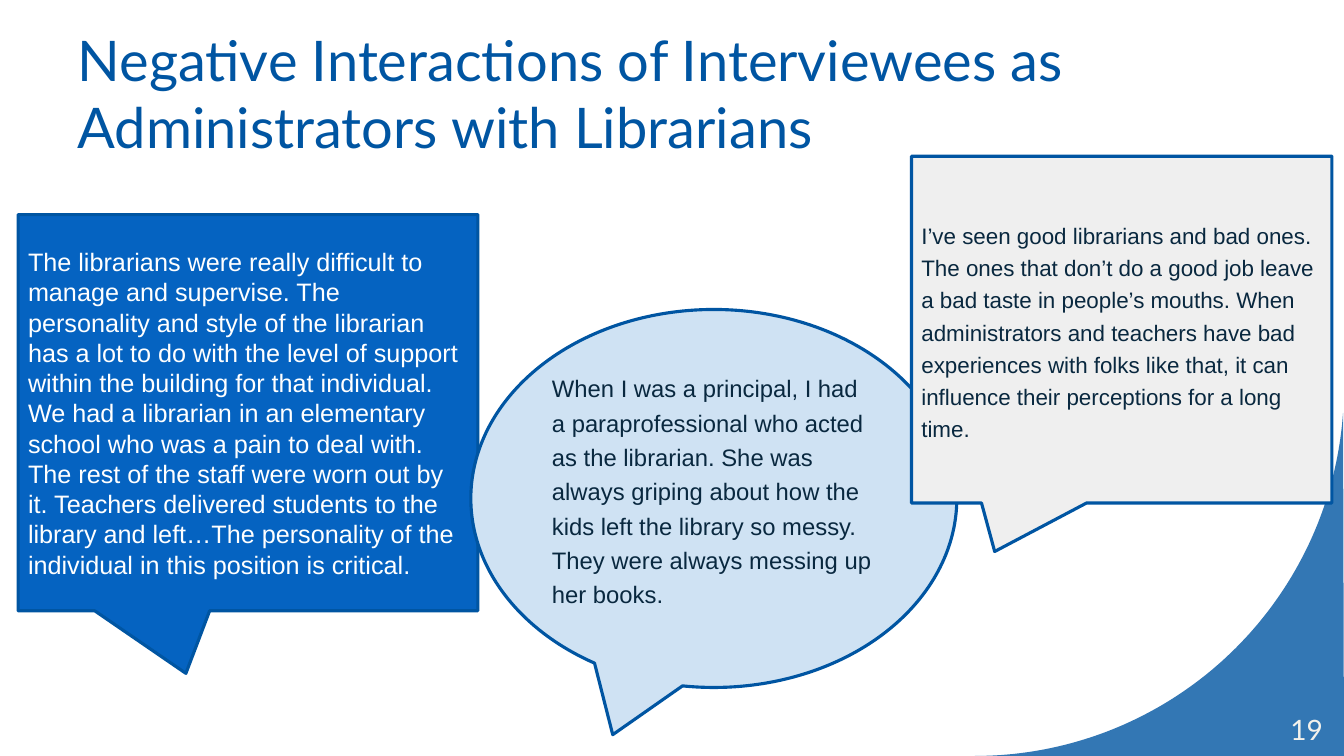
import math
from lxml import etree
from pptx import Presentation
from pptx.dml.color import RGBColor
from pptx.enum import shapes, text
from pptx.oxml import ns
from pptx.util import Inches, Pt

BLUE = RGBColor(0x00, 0x55, 0xA2)
BRIGHT_BLUE = RGBColor(0x05, 0x63, 0xC1)
PALE_BLUE = RGBColor(0xCF, 0xE2, 0xF3)
LIGHT_GRAY = RGBColor(0xEF, 0xEF, 0xEF)
NAVY = RGBColor(0x09, 0x28, 0x3F)
WHITE = RGBColor(0xFF, 0xFF, 0xFF)
CREAM = RGBColor(0xF4, 0xF2, 0xEC)


def write_text(shape, content, size, color, font="Lato", align=text.PP_ALIGN.LEFT,
               spacing=1.0, before=0, margin=0.05, bottom=0.05):
    frame = shape.text_frame
    frame.word_wrap = True
    frame.auto_size = text.MSO_AUTO_SIZE.NONE
    frame.vertical_anchor = text.MSO_ANCHOR.MIDDLE
    frame.margin_left = frame.margin_right = Inches(0.1)
    frame.margin_top, frame.margin_bottom = Inches(margin), Inches(bottom)
    paragraph = frame.paragraphs[0]
    paragraph.alignment = align
    paragraph.line_spacing = spacing
    paragraph.space_before = Pt(before)
    run = paragraph.add_run()
    run.text = content
    run.font.name = font
    run.font.size = Pt(size)
    run.font.color.rgb = color


presentation = Presentation()
presentation.slide_width = Inches(13.33)
presentation.slide_height = Inches(7.5)
slide = presentation.slides.add_slide(presentation.slide_layouts[5])

center_x, center_y, radius = 9.67, 3.84, 3.66
arc = [(Inches(center_x + radius * math.cos(math.radians(angle))),
        Inches(center_y + radius * math.sin(math.radians(angle))))
       for angle in range(90, 3, -1)]
builder = slide.shapes.build_freeform(*arc[0])
builder.add_line_segments(arc[1:] + [(Inches(13.33), Inches(7.5))], close=True)
corner = builder.convert_to_shape()
corner.shadow.inherit = False
corner.line.fill.background()
corner.fill.solid()
corner.fill.fore_color.rgb = BLUE
corner_color = corner._element.spPr.find(".//" + ns.qn("a:srgbClr"))
etree.SubElement(corner_color, ns.qn("a:alpha"), val="80000")

title = slide.shapes.title
title.left, title.top = Inches(0.67), Inches(0.19)
title.width, title.height = Inches(10.84), Inches(1.45)
write_text(title, "Negative Interactions of Interviewees as Administrators with Librarians",
           size=40, color=BLUE)

page_number = slide.shapes.add_textbox(Inches(12.46), Inches(7.04), Inches(0.76), Inches(0.4))
write_text(page_number, "19", size=20, color=CREAM, align=text.PP_ALIGN.RIGHT)

SHAPE = shapes.MSO_SHAPE
callouts = [
    (SHAPE.ROUNDED_RECTANGULAR_CALLOUT, (0.18, 2.13, 4.56, 3.93), (-0.135, 0.658, 0),
     BRIGHT_BLUE, WHITE, 18, 1.0, 0.1,
     "The librarians were really difficult to manage and supervise. The personality and style "
     "of the librarian has a lot to do with the level of support within the building for that "
     "individual. We had a librarian in an elementary school who was a pain to deal with. The "
     "rest of the staff were worn out by it. Teachers delivered students to the library and "
     "left…The personality of the individual in this position is critical."),
    (SHAPE.OVAL_CALLOUT, (4.67, 3.07, 4.82, 3.75), (-0.208, 0.625),
     PALE_BLUE, NAVY, 17, 1.2, 0.3,
     "When I was a principal, I had a paraprofessional who acted as the librarian. She was "
     "always griping about how the kids left the library so messy. They were always messing "
     "up her books."),
    (SHAPE.RECTANGULAR_CALLOUT, (9.04, 1.55, 4.17, 3.44), (-0.302, 0.64),
     LIGHT_GRAY, NAVY, 16, 1.2, 0.1,
     "I’ve seen good librarians and bad ones. The ones that don’t do a good job leave a bad "
     "taste in people’s mouths. When administrators and teachers have bad experiences with "
     "folks like that, it can influence their perceptions for a long time."),
]
for kind, box, adjustments, fill, color, size, spacing, bottom, quote in callouts:
    callout = slide.shapes.add_shape(kind, *map(Inches, box))
    for index, value in enumerate(adjustments):
        callout.adjustments[index] = value
    callout.shadow.inherit = False
    callout.fill.solid()
    callout.fill.fore_color.rgb = fill
    callout.line.color.rgb = BLUE
    callout.line.width = Pt(2.25)
    write_text(callout, quote, size=size, color=color, font="Arial", spacing=spacing,
               before=10, margin=0.1, bottom=bottom)

presentation.save("out.pptx")
